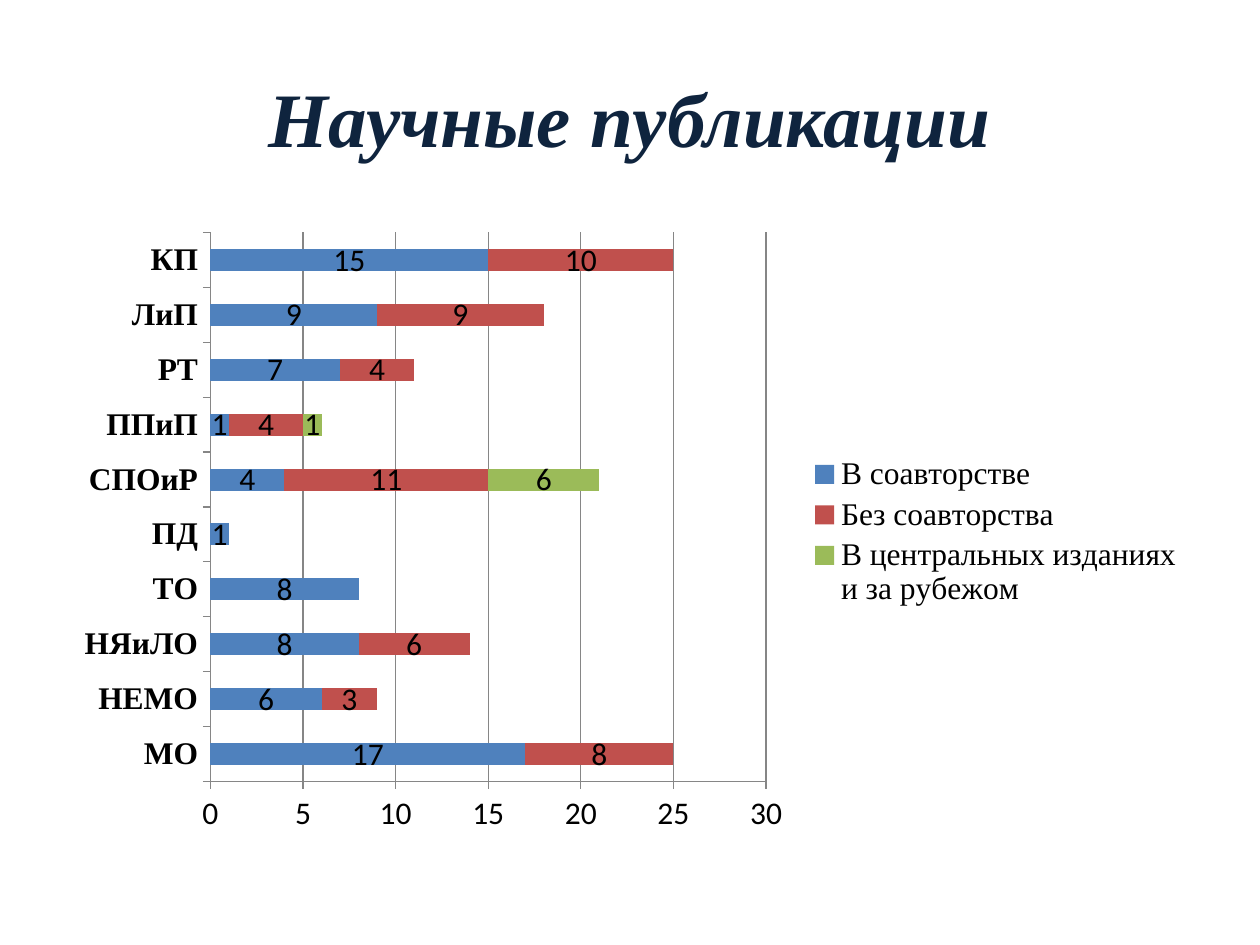
import pptx
import pptx.chart.data
import pptx.dml.color
import pptx.enum.chart
import pptx.enum.text
import pptx.oxml
import pptx.oxml.ns
import pptx.util

RGBColor = pptx.dml.color.RGBColor
NAVY = RGBColor(0x0F, 0x24, 0x3E)
BLACK = RGBColor(0x00, 0x00, 0x00)
GRAY = RGBColor(0x86, 0x86, 0x86)
BLUE = RGBColor(0x4F, 0x81, 0xBD)
RED = RGBColor(0xC0, 0x50, 0x4D)
GREEN = RGBColor(0x9B, 0xBB, 0x59)

PIXELS_PER_INCH = 126
SERIF = "Times New Roman"
SANS = "Calibri"

DEPARTMENTS = ["МО", "НЕМО", "НЯиЛО", "ТО", "ПД",
               "СПОиР", "ППиП", "РТ", "ЛиП", "КП"]
PUBLICATIONS = [
    ("В соавторстве", BLUE, [17, 6, 8, 8, 1, 4, 1, 7, 9, 15]),
    ("Без соавторства", RED, [8, 3, 6, None, None, 11, 4, 4, 9, 10]),
    ("В центральных изданиях и за рубежом", GREEN,
     [None, None, None, None, None, 6, 1, None, None, None]),
]


def px(length):
    return pptx.util.Emu(round(length * 914400 / PIXELS_PER_INCH))


def format_font(font, name=SANS, size=18, color=BLACK, bold=False, italic=False):
    font.name = name
    font.size = pptx.util.Pt(size)
    font.color.rgb = color
    font.bold = bold
    font.italic = italic


def write_text(text_frame, text, align=pptx.enum.text.PP_ALIGN.CENTER, **font_format):
    paragraph = text_frame.paragraphs[0]
    paragraph.alignment = align
    run = paragraph.add_run()
    run.text = text
    format_font(run.font, **font_format)


class SlideBuilder:
    """Holds the line style and the current slide."""

    line_color = GRAY
    line_width = pptx.util.Pt(0.75)

    def __init__(self, presentation):
        self.slide = presentation.slides.add_slide(presentation.slide_layouts[5])

    def title(self, text, left, top, width, height):
        shape = self.slide.shapes.title
        shape.left, shape.top = px(left), px(top)
        shape.width, shape.height = px(width), px(height)
        shape.text_frame.vertical_anchor = pptx.enum.text.MSO_ANCHOR.MIDDLE
        write_text(shape.text_frame, text, name=SERIF, size=44, color=NAVY,
                   bold=True, italic=True)

    def style_line(self, line):
        line.color.rgb = self.line_color
        line.width = self.line_width

    def place_plot(self, chart, **fractions):
        """Fix the inner plot area, in fractions of the chart."""
        plot_area = chart.plots[0]._element.getparent()
        for old_layout in plot_area.findall(pptx.oxml.ns.qn("c:layout")):
            plot_area.remove(old_layout)
        sizes = "".join(f'<c:{key} val="{value}"/>' for key, value in fractions.items())
        plot_area.insert(0, pptx.oxml.parse_xml(
            f'<c:layout {pptx.oxml.ns.nsdecls("c")}><c:manualLayout>'
            '<c:layoutTarget val="inner"/><c:xMode val="edge"/><c:yMode val="edge"/>'
            f'{sizes}</c:manualLayout></c:layout>'))

    def stacked_bars(self, categories, series_rows, left, top, width, height):
        data = pptx.chart.data.CategoryChartData()
        data.categories = categories
        for name, _, values in series_rows:
            data.add_series(name, values)
        chart = self.slide.shapes.add_chart(
            pptx.enum.chart.XL_CHART_TYPE.BAR_STACKED,
            px(left), px(top), px(width), px(height), data).chart
        chart.has_title = False
        format_font(chart.font)

        # Bars and their values
        plot = chart.plots[0]
        plot.gap_width = 150
        plot.overlap = 100
        plot.vary_by_categories = False
        for series, (_, color, _) in zip(plot.series, series_rows):
            series.format.fill.solid()
            series.format.fill.fore_color.rgb = color
            series.data_labels.show_value = True
            format_font(series.data_labels.font)

        # Axes
        for axis in (chart.category_axis, chart.value_axis):
            axis.major_tick_mark = pptx.enum.chart.XL_TICK_MARK.OUTSIDE
            axis.minor_tick_mark = pptx.enum.chart.XL_TICK_MARK.NONE
            self.style_line(axis.format.line)
        format_font(chart.category_axis.tick_labels.font, name=SERIF, bold=True)
        format_font(chart.value_axis.tick_labels.font)
        chart.value_axis.minimum_scale = 0
        chart.value_axis.maximum_scale = 30
        chart.value_axis.major_unit = 5
        chart.value_axis.has_major_gridlines = True
        self.style_line(chart.value_axis.major_gridlines.format.line)

        # Legend
        chart.has_legend = True
        chart.legend.position = pptx.enum.chart.XL_LEGEND_POSITION.RIGHT
        chart.legend.include_in_layout = False
        format_font(chart.legend.font, name=SERIF)
        self.place_plot(chart, x=0.13, y=0.02, w=0.49, h=0.88)


def main():
    presentation = pptx.Presentation()
    presentation.slide_width = px(1260)
    presentation.slide_height = px(945)
    builder = SlideBuilder(presentation)
    builder.title("Научные публикации", 63, 38, 1134, 157)
    builder.stacked_bars(DEPARTMENTS, PUBLICATIONS, 63, 220, 1134, 624)
    presentation.save("out.pptx")


if __name__ == "__main__":
    main()
